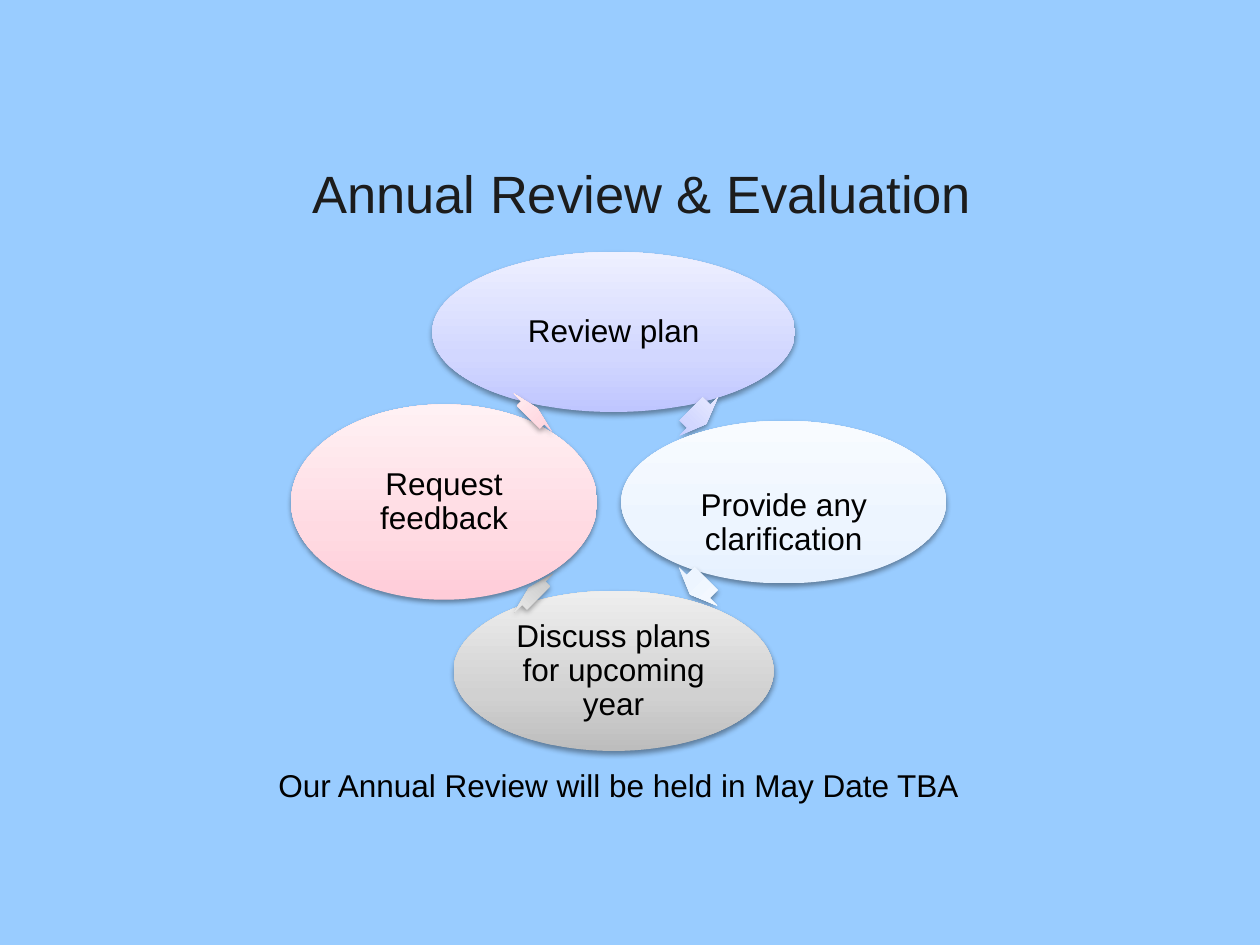
from dataclasses import dataclass

from pptx import Presentation
from pptx.dml.color import RGBColor
from pptx.enum.shapes import MSO_SHAPE
from pptx.enum.text import MSO_ANCHOR, MSO_AUTO_SIZE, PP_ALIGN
from pptx.oxml import parse_xml
from pptx.oxml.ns import nsdecls
from pptx.util import Inches, Pt

FONT = "Arial"
SKY = RGBColor(0x99, 0xCC, 0xFF)
CHARCOAL = RGBColor(0x1C, 0x1C, 0x1C)
BLACK = RGBColor(0, 0, 0)

LAVENDER = (RGBColor(0xBF, 0xC6, 0xFF), RGBColor(0xD2, 0xD7, 0xFF), RGBColor(0xEE, 0xF0, 0xFF))
ICE = (RGBColor(0xE6, 0xF1, 0xFF), RGBColor(0xED, 0xF5, 0xFF), RGBColor(0xF8, 0xFB, 0xFF))
GRAY = (RGBColor(0xBD, 0xBD, 0xBD), RGBColor(0xD1, 0xD1, 0xD1), RGBColor(0xEE, 0xEE, 0xEE))
PINK = (RGBColor(0xFF, 0xCC, 0xD8), RGBColor(0xFF, 0xDA, 0xE2), RGBColor(0xFF, 0xF1, 0xF4))
STOPS = (0, 35, 100)

Box = tuple[float, float, float, float]


@dataclass
class Step:
    text: str
    colors: tuple[RGBColor, ...]
    oval: Box
    arrow: Box
    inset_top: float = 0.03


STEPS = [
    Step("Review plan", LAVENDER, (3.43, 2, 2.88, 1.27), (5.46, 3.09, 0.17, 0.43)),
    Step("Provide any clarification", ICE, (4.93, 3.34, 2.58, 1.29),
         (5.45, 4.44, 0.18, 0.43), inset_top=0.36),
    Step("Discuss plans for upcoming year", GRAY, (3.6, 4.69, 2.54, 1.27),
         (4.18, 4.49, 0.11, 0.43)),
    Step("Request feedback", PINK, (2.31, 3.21, 2.43, 1.55), (4.18, 3.06, 0.1, 0.43)),
]


def set_font(p, size: float, color: RGBColor) -> None:
    p.font.name = FONT
    p.font.size = Pt(size)
    p.font.color.rgb = color


def add_shaded_shape(slide, kind: MSO_SHAPE, box: Box, colors: tuple[RGBColor, ...]):
    """Add a borderless shape with a vertical gradient and a soft shadow below."""
    s = slide.shapes.add_shape(kind, *map(Inches, box))
    stops = "".join(
        f'<a:gs pos="{pos * 1000}"><a:srgbClr val="{color}"/></a:gs>'
        for pos, color in zip(STOPS, colors)
    )
    sp_pr = s._element.spPr
    sp_pr.append(parse_xml(
        f'<a:gradFill {nsdecls("a")} rotWithShape="1"><a:gsLst>{stops}</a:gsLst>'
        '<a:lin ang="16200000" scaled="0"/></a:gradFill>'
    ))
    s.line.fill.background()
    sp_pr.append(parse_xml(
        f'<a:effectLst {nsdecls("a")}><a:outerShdw blurRad="40000" dist="20000" '
        'dir="5400000" rotWithShape="0"><a:srgbClr val="000000"><a:alpha val="38000"/>'
        '</a:srgbClr></a:outerShdw></a:effectLst>'
    ))
    return s


def add_step(slide, step: Step, rotation: float) -> None:
    oval = add_shaded_shape(slide, MSO_SHAPE.OVAL, step.oval, step.colors)
    tf = oval.text_frame
    tf.word_wrap = True
    tf.vertical_anchor = MSO_ANCHOR.MIDDLE
    tf.margin_left = tf.margin_right = tf.margin_bottom = Inches(0.03)
    tf.margin_top = Inches(step.inset_top)
    p = tf.paragraphs[0]
    p.text = step.text
    p.alignment = PP_ALIGN.CENTER
    p.line_spacing = 0.9
    set_font(p, 18, BLACK)

    arrow = add_shaded_shape(slide, MSO_SHAPE.RIGHT_ARROW, step.arrow, step.colors)
    arrow.adjustments[0] = 0.6
    arrow.adjustments[1] = 0.5
    arrow.rotation = rotation


def add_title(slide, text: str) -> None:
    title = slide.shapes.title
    title.left, title.top, title.width, title.height = map(Inches, (1.75, 1.12, 6.69, 0.81))
    tf = title.text_frame
    tf.text = text
    tf.auto_size = MSO_AUTO_SIZE.NONE
    tf.vertical_anchor = MSO_ANCHOR.MIDDLE
    p = tf.paragraphs[0]
    p.alignment = PP_ALIGN.CENTER
    set_font(p, 30, CHARCOAL)


def add_date_note(slide, text: str) -> None:
    tf = slide.shapes.add_textbox(*map(Inches, (1.69, 6.03, 6.75, 0.4))).text_frame
    tf.word_wrap = True
    tf.margin_left = Inches(0.52)
    p = tf.paragraphs[0]
    p.text = text
    set_font(p, 18, BLACK)


def main() -> None:
    prs = Presentation()
    prs.slide_width, prs.slide_height = Inches(10), Inches(7.5)
    slide = prs.slides.add_slide(prs.slide_layouts[5])
    slide.background.fill.solid()
    slide.background.fill.fore_color.rgb = SKY

    add_title(slide, "Annual Review & Evaluation")
    for i, step in enumerate(STEPS):
        add_step(slide, step, rotation=45 + 90 * i)
    add_date_note(slide, "Our Annual Review will be held in May Date TBA")
    prs.save("out.pptx")


if __name__ == "__main__":
    main()
